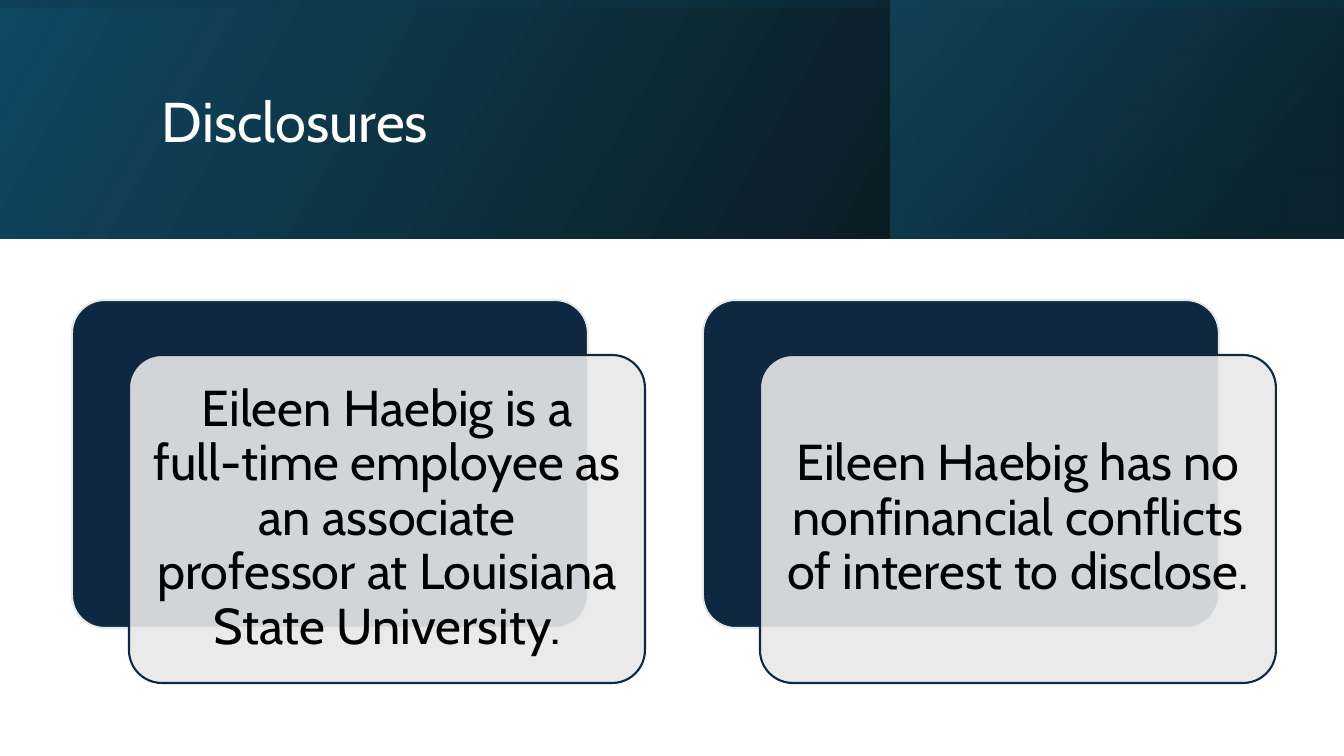
from lxml.etree import SubElement
from pptx import Presentation
from pptx.dml.color import RGBColor
from pptx.enum.shapes import MSO_SHAPE
from pptx.enum.text import MSO_ANCHOR, PP_ALIGN
from pptx.oxml.ns import qn
from pptx.util import Emu, Pt

TITLE = "Disclosures"
DISCLOSURES = [
    "Eileen Haebig is a full-time employee as an associate professor at Louisiana State University.",
    "Eileen Haebig has no nonfinancial conflicts of interest to disclose.",
]
FONT = "Cabin"
NAVY, GREY, WHITE, BLACK = "0E2841", "E8E8E8", "FFFFFF", "000000"

SLIDE_WIDTH, SLIDE_HEIGHT = 1344, 756
BANNER_HEIGHT = 239
# box, rotation, clockwise gradient angle, stops of (position %, colour, opacity %)
BANNER_LAYERS = [
    ((0, 0, SLIDE_WIDTH, BANNER_HEIGHT), 0, 330, [(0, "000000", 96), (100, "104862", 100)]),
    ((891, 0, 452, BANNER_HEIGHT), 0, 320, [(19, "0B3041", 68), (100, "156082", 48)]),
    ((552, -552, BANNER_HEIGHT, SLIDE_WIDTH), 270, 350, [(23, "104862", 16), (99, "000000", 45)]),
]
TITLE_BOX = (152, 38, 1072, 173)
CARD_LEFT, CARD_TOP, CARD_WIDTH, CARD_HEIGHT = 72, 300, 516, 328
CARD_PITCH = 631
FRONT_SHIFT_X, FRONT_SHIFT_Y = 57, 55
CARD_INSET = 15


def px(length):
    return Emu(length * 914400 * 10 // 1008)


def color(hex_string):
    return RGBColor.from_string(hex_string)


def set_opacity(color_element, percent):
    if percent < 100:
        SubElement(color_element, qn("a:alpha")).set("val", str(percent * 1000))


def add_shape(slide, kind, box):
    shape = slide.shapes.add_shape(kind, *map(px, box))
    shape.shadow.inherit = False
    return shape


def add_banner_layer(slide, box, rotation, angle, stops):
    shape = add_shape(slide, MSO_SHAPE.RECTANGLE, box)
    shape.rotation = rotation
    shape._element.spPr.xfrm.set("flipH", "1")
    shape.line.fill.background()
    shape.fill.gradient()
    shape.fill.gradient_angle = 360 - angle
    for stop, (position, hex_string, _) in zip(shape.fill.gradient_stops, stops):
        stop.position = position / 100
        stop.color.rgb = color(hex_string)
    color_elements = list(shape._element.spPr.iter(qn("a:srgbClr")))
    for element, (_, _, opacity) in zip(color_elements, stops):
        set_opacity(element, opacity)


def add_panel(slide, left, top, fill, line, opacity=100):
    box = (left, top, CARD_WIDTH, CARD_HEIGHT)
    shape = add_shape(slide, MSO_SHAPE.ROUNDED_RECTANGLE, box)
    shape.adjustments[0] = 0.1
    shape.fill.solid()
    shape.fill.fore_color.rgb = color(fill)
    set_opacity(next(shape._element.spPr.iter(qn("a:srgbClr"))), opacity)
    shape.line.color.rgb = color(line)
    shape.line.width = Pt(1.5)
    return shape


def write_text(shape, text, size, hex_string, alignment):
    frame = shape.text_frame
    frame.word_wrap = True
    frame.vertical_anchor = MSO_ANCHOR.MIDDLE
    paragraph = frame.paragraphs[0]
    paragraph.alignment = alignment
    paragraph.line_spacing = 0.9
    run = paragraph.add_run()
    run.text = text
    run.font.name = FONT
    run.font.size = Pt(size)
    run.font.color.rgb = color(hex_string)
    return frame


def add_card(slide, left, text):
    """Solid panel behind, translucent panel with the text shifted in front."""
    add_panel(slide, left, CARD_TOP, NAVY, GREY)
    front = add_panel(slide, left + FRONT_SHIFT_X, CARD_TOP + FRONT_SHIFT_Y, GREY, NAVY, 90)
    frame = write_text(front, text, 36, BLACK, PP_ALIGN.CENTER)
    frame.margin_left = frame.margin_right = px(CARD_INSET)
    frame.margin_top = frame.margin_bottom = px(CARD_INSET)


def main():
    presentation = Presentation()
    presentation.slide_width = px(SLIDE_WIDTH)
    presentation.slide_height = px(SLIDE_HEIGHT)
    slide = presentation.slides.add_slide(presentation.slide_layouts[6])
    for layer in BANNER_LAYERS:
        add_banner_layer(slide, *layer)
    title = slide.shapes.add_textbox(*map(px, TITLE_BOX))
    write_text(title, TITLE, 40, WHITE, PP_ALIGN.LEFT)
    for index, text in enumerate(DISCLOSURES):
        add_card(slide, CARD_LEFT + index * CARD_PITCH, text)
    presentation.save("out.pptx")


if __name__ == "__main__":
    main()
